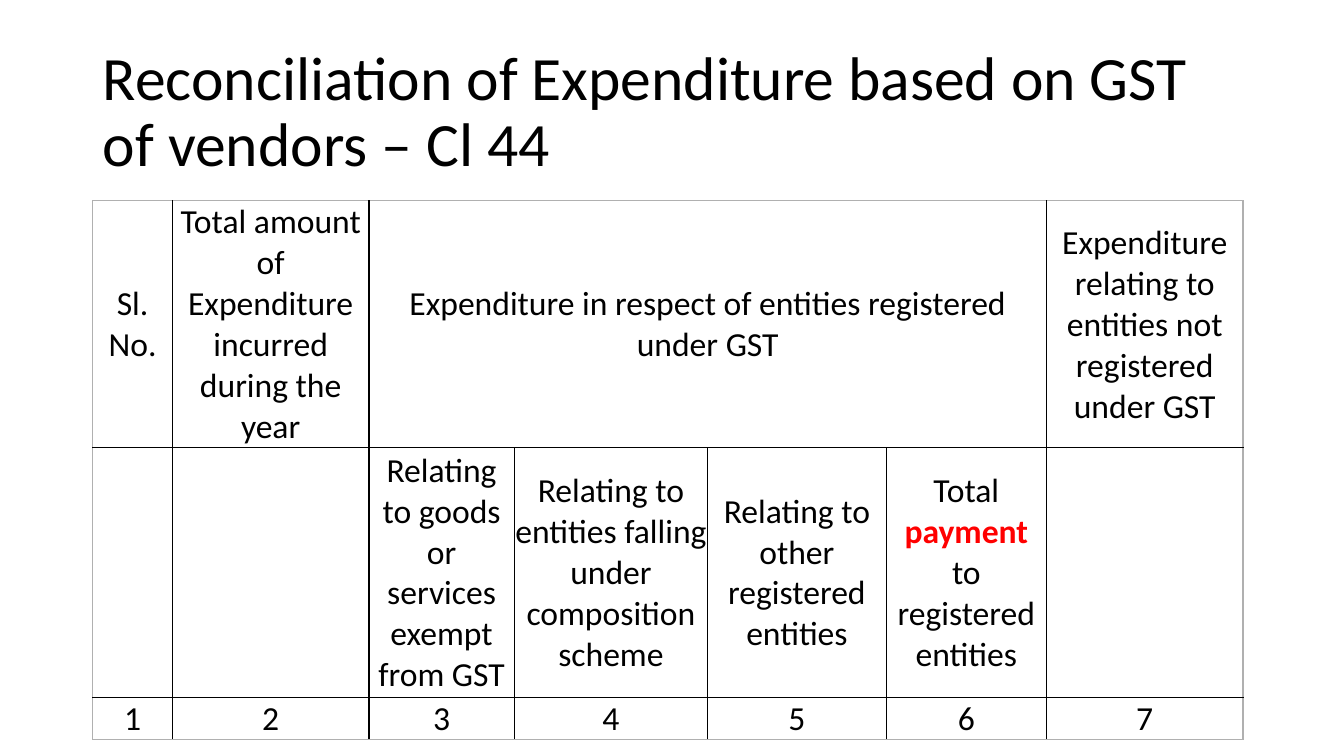
"""Build a slide with the table that reconciles expenditure by GST status of vendors."""
from lxml import etree
from pptx import Presentation
from pptx.dml.color import RGBColor
from pptx.enum import text
from pptx.oxml import ns
from pptx.util import Inches, Pt

TITLE = "Reconciliation of Expenditure based on GST of vendors – Cl 44"
EMPHASIS = "payment"
ROWS = [
    [["Sl. No."], ["Total amount of Expenditure incurred during the year"],
     ["Expenditure in respect of entities registered under GST"], [], [], [],
     ["Expenditure relating to entities not registered under GST"]],
    [[], [], ["Relating to goods or services exempt from GST"],
     ["Relating to entities falling under composition scheme"],
     ["Relating to other registered entities"],
     ["Total ", EMPHASIS, " to registered entities"], []],
    [[str(number)] for number in range(1, 8)],
]
COLUMN_WIDTHS = [0.79, 1.95, 1.44, 1.92, 1.77, 1.59, 1.95]
ROW_HEIGHTS = [2.45, 2.48, 0.42]
COLORS = {"text": "000000", "emphasis": "FF0000", "inner": "000000", "outer": "B0B0B0"}
FONT = "Calibri"


def add_run(paragraph, content, size, color="text", bold=False):
    """Append one formatted run to a paragraph."""
    run = paragraph.add_run()
    run.text = content
    run.font.name = FONT
    run.font.size = Pt(size)
    run.font.bold = bold
    run.font.color.rgb = RGBColor.from_string(COLORS[color])


def set_borders(cell, outer_sides):
    """Draw the four cell borders, lighter on the table's outer edge."""
    properties = cell._tc.get_or_add_tcPr()
    for index, side in enumerate("LRTB"):
        line = etree.Element(ns.qn(f"a:ln{side}"), w=str(Pt(1)))
        fill = etree.SubElement(line, ns.qn("a:solidFill"))
        color = COLORS["outer" if side in outer_sides else "inner"]
        etree.SubElement(fill, ns.qn("a:srgbClr"), val=color)
        properties.insert(index, line)


def add_title(slide):
    """Fill and place the title placeholder."""
    title = slide.shapes.title
    title.left, title.top = Inches(0.92), Inches(0.4)
    title.width, title.height = Inches(11.5), Inches(1.45)
    title.text_frame.vertical_anchor = text.MSO_ANCHOR.MIDDLE
    paragraph = title.text_frame.paragraphs[0]
    paragraph.alignment = text.PP_ALIGN.LEFT
    paragraph.line_spacing = 0.9
    add_run(paragraph, TITLE, 44)


def add_expenditure_table(slide):
    """Add the expenditure table with its merged heading."""
    last_row, last_column = len(ROW_HEIGHTS) - 1, len(COLUMN_WIDTHS) - 1
    frame = slide.shapes.add_table(
        len(ROW_HEIGHTS), len(COLUMN_WIDTHS), Inches(0.92), Inches(1.99),
        Inches(sum(COLUMN_WIDTHS)), Inches(sum(ROW_HEIGHTS)))
    table = frame.table
    table.first_row = table.horz_banding = False
    for column, width in zip(table.columns, COLUMN_WIDTHS):
        column.width = Inches(width)
    for row, height in zip(table.rows, ROW_HEIGHTS):
        row.height = Inches(height)
    table.cell(0, 2).merge(table.cell(0, 5))

    for row_index, row in enumerate(ROWS):
        for column_index, parts in enumerate(row):
            cell = table.cell(row_index, column_index)
            if cell.is_spanned:
                continue
            cell.fill.background()
            edges = {"L": column_index == 0, "R": column_index == last_column,
                     "T": row_index == 0, "B": row_index == last_row}
            set_borders(cell, [side for side, outer in edges.items() if outer])
            cell.margin_left = cell.margin_right = cell.margin_top = Inches(0.01)
            cell.margin_bottom = 0
            cell.vertical_anchor = (text.MSO_ANCHOR.BOTTOM if row_index == last_row
                                    else text.MSO_ANCHOR.MIDDLE)
            paragraph = cell.text_frame.paragraphs[0]
            paragraph.alignment = text.PP_ALIGN.CENTER
            for part in parts:
                emphasized = part == EMPHASIS
                add_run(paragraph, part, 24, "emphasis" if emphasized else "text", emphasized)


def main():
    """Create and save the presentation."""
    presentation = Presentation()
    presentation.slide_width, presentation.slide_height = Inches(13.33), Inches(7.5)
    slide = presentation.slides.add_slide(presentation.slide_layouts[5])
    add_title(slide)
    add_expenditure_table(slide)
    presentation.save("out.pptx")


if __name__ == "__main__":
    main()
